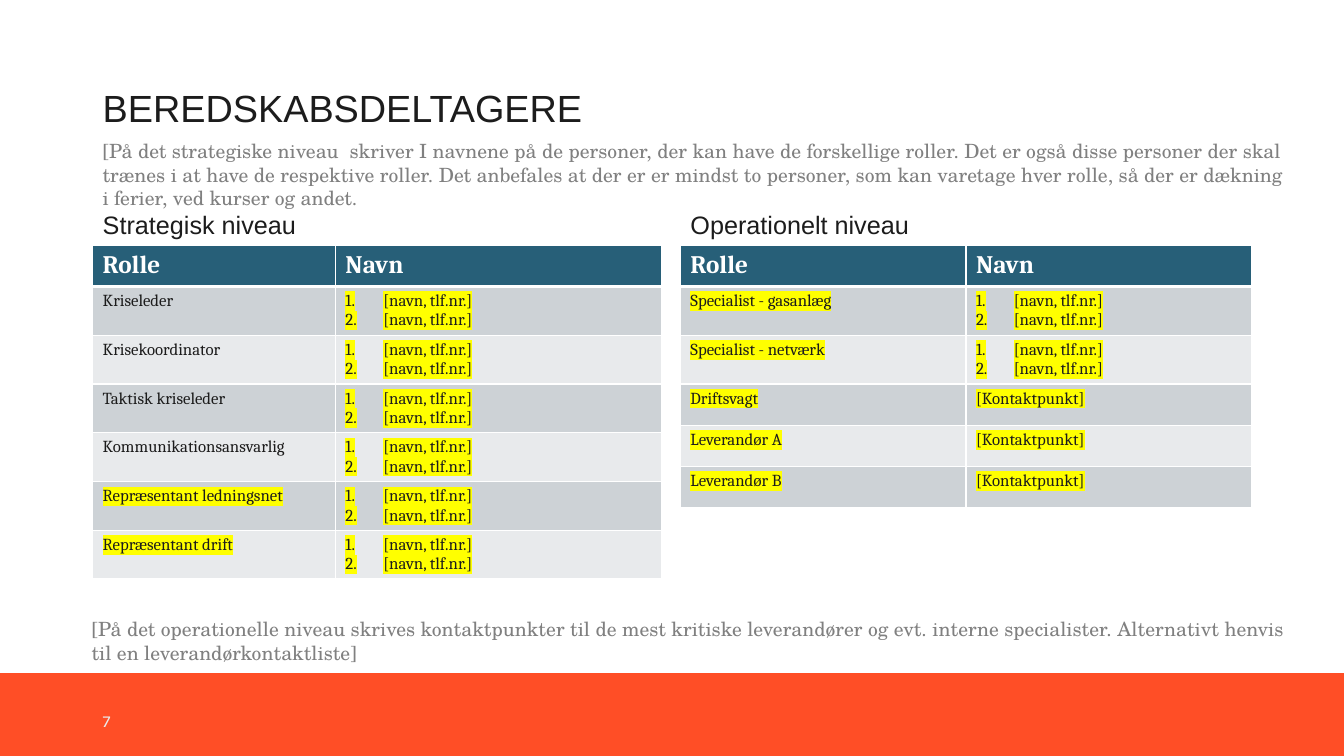
from lxml.etree import SubElement
from pptx import Presentation
from pptx.dml.color import RGBColor
from pptx.enum.shapes import MSO_SHAPE
from pptx.enum.text import MSO_ANCHOR, MSO_AUTO_SIZE, PP_ALIGN
from pptx.oxml.ns import qn
from pptx.util import Pt

ORANGE = RGBColor(0xFF, 0x4E, 0x26)
PETROL = RGBColor(0x27, 0x5F, 0x78)
ROW_DARK = RGBColor(0xCD, 0xD2, 0xD6)
ROW_LIGHT = RGBColor(0xE8, 0xEA, 0xEC)
INK = RGBColor(0x1C, 0x1C, 0x1C)
GREY = RGBColor(0x80, 0x80, 0x80)
PALE = RGBColor(0xEA, 0xEA, 0xEA)
WHITE = RGBColor(0xFF, 0xFF, 0xFF)
YELLOW = RGBColor(0xFF, 0xFF, 0x00)

SLIDE_WIDTH, SLIDE_HEIGHT = 960, 540
LEFT_EDGE = 66.2
NOTE_RIGHT = 926
ROW_HEIGHT = 29.4

NAMES = ["[navn, tlf.nr.]"] * 2
CONTACT = ["[Kontaktpunkt]"]

# Each row: role, whether the role is highlighted, entries in the name column
STRATEGIC = [
    ("Kriseleder", False, NAMES),
    ("Krisekoordinator", False, NAMES),
    ("Taktisk kriseleder", False, NAMES),
    ("Kommunikationsansvarlig", False, NAMES),
    ("Repræsentant ledningsnet", True, NAMES),
    ("Repræsentant drift", True, NAMES),
]
OPERATIONAL = [
    ("Specialist - gasanlæg", True, NAMES),
    ("Specialist - netværk", True, NAMES),
    ("Driftsvagt", True, CONTACT),
    ("Leverandør A", True, CONTACT),
    ("Leverandør B", True, CONTACT),
]
INTRO = ("[På det strategiske niveau  skriver I navnene på de personer, der kan have "
         "de forskellige roller. Det er også disse personer der skal trænes i at have "
         "de respektive roller. Det anbefales at der er er mindst to personer, som kan "
         "varetage hver rolle, så der er dækning i ferier, ved kurser og andet.")
CLOSING = ("[På det operationelle niveau skrives kontaktpunkter til de mest kritiske "
           "leverandører og evt. interne specialister. Alternativt henvis til en "
           "leverandørkontaktliste]")


def add_run(paragraph, text, font, size, color, bold=False, highlight=False):
    run = paragraph.add_run()
    run.text = text
    run.font.size = Pt(size)
    run.font.bold = bold
    run.font.color.rgb = color
    run.font.name = font
    if highlight:
        properties = run.font._element
        mark = properties.makeelement(qn("a:highlight"), {})
        SubElement(mark, qn("a:srgbClr"), val=str(YELLOW))
        properties.find(qn("a:solidFill")).addnext(mark)


def place(shape, left, top, width, height):
    shape.left, shape.top = Pt(left), Pt(top)
    shape.width, shape.height = Pt(width), Pt(height)


def fill_heading(placeholder, box, text, size):
    place(placeholder, *box)
    frame = placeholder.text_frame
    frame.auto_size = MSO_AUTO_SIZE.NONE
    frame.word_wrap = True
    frame.vertical_anchor = MSO_ANCHOR.BOTTOM
    paragraph = frame.paragraphs[0]
    paragraph.alignment = PP_ALIGN.LEFT
    paragraph.line_spacing = 0.9
    paragraph.space_before = Pt(0)
    add_run(paragraph, text, "Arial", size, INK)


def add_text(slide, box, text, font, size, color, anchor):
    frame = slide.shapes.add_textbox(*map(Pt, box)).text_frame
    frame.auto_size = MSO_AUTO_SIZE.NONE
    frame.word_wrap = True
    frame.vertical_anchor = anchor
    add_run(frame.paragraphs[0], text, font, size, color)


def style_cell(cell, color, top_line=1, bottom_line=1):
    cell.fill.solid()
    cell.fill.fore_color.rgb = color
    properties = cell._tc.get_or_add_tcPr()
    sides = {"a:lnL": 1, "a:lnR": 1, "a:lnT": top_line, "a:lnB": bottom_line}
    for position, (side, weight) in enumerate(sides.items()):
        line = properties.makeelement(qn(side), {"w": str(Pt(weight))})
        SubElement(SubElement(line, qn("a:solidFill")), qn("a:srgbClr"), val=str(WHITE))
        properties.insert(position, line)


def number_paragraph(paragraph):
    properties = paragraph._p.get_or_add_pPr()
    indent = Pt(27)
    properties.set("marL", str(indent))
    properties.set("indent", str(-indent))
    SubElement(properties, qn("a:buFont"), typeface="+mj-lt")
    SubElement(properties, qn("a:buAutoNum"), type="arabicPeriod")


def add_role_table(slide, left, top, column_widths, members):
    row_count = len(members) + 1
    table = slide.shapes.add_table(row_count, 2, Pt(left), Pt(top), Pt(sum(column_widths)),
                                   Pt(ROW_HEIGHT * row_count)).table
    table.horz_banding = False
    for column, width in zip(table.columns, column_widths):
        column.width = Pt(width)
    for row in table.rows:
        row.height = Pt(ROW_HEIGHT)

    # Header row
    for index, heading in enumerate(("Rolle", "Navn")):
        cell = table.cell(0, index)
        style_cell(cell, PETROL, bottom_line=3)
        add_run(cell.text_frame.paragraphs[0], heading, "Cambria", 18, WHITE, bold=True)

    # One row per role
    for index, (role, marked, entries) in enumerate(members, start=1):
        role_cell, name_cell = table.cell(index, 0), table.cell(index, 1)
        for cell in (role_cell, name_cell):
            style_cell(cell, ROW_DARK if index % 2 else ROW_LIGHT,
                       top_line=3 if index == 1 else 1)
        add_run(role_cell.text_frame.paragraphs[0], role, "Cambria", 12, INK, highlight=marked)
        names = name_cell.text_frame
        for entry_index, entry in enumerate(entries):
            paragraph = names.add_paragraph() if entry_index else names.paragraphs[0]
            if len(entries) > 1:
                number_paragraph(paragraph)
            add_run(paragraph, entry, "Cambria", 12, INK, highlight=True)


def add_level(slide, placeholder, left, top, heading, column_widths, members):
    heading_height = 64.8
    fill_heading(placeholder, (left, top, sum(column_widths), heading_height), heading, 18)
    add_role_table(slide, left, top + heading_height, column_widths, members)


def add_footer(slide, top):
    band = slide.shapes.add_shape(MSO_SHAPE.RECTANGLE, 0, Pt(top), Pt(SLIDE_WIDTH),
                                  Pt(SLIDE_HEIGHT - top))
    band.shadow.inherit = False
    band.fill.solid()
    band.fill.fore_color.rgb = ORANGE
    band.line.fill.background()
    add_text(slide, (LEFT_EDGE, top + 19.6, 216, 28.8), "7", "Karla", 12, PALE,
             MSO_ANCHOR.MIDDLE)


def add_note(slide, left, top, height, text):
    add_text(slide, (left, top, NOTE_RIGHT - left, height), text, "TeX Gyre Schola", 14,
             GREY, MSO_ANCHOR.BOTTOM)


def build_participants_slide(presentation):
    slide = presentation.slides.add_slide(presentation.slide_layouts.get_by_name("Comparison"))
    slide.background.fill.solid()
    slide.background.fill.fore_color.rgb = WHITE
    title, strategic, strategic_content, operational, operational_content = slide.placeholders
    for unused in (strategic_content, operational_content):
        unused._element.getparent().remove(unused._element)

    add_footer(slide, 480.8)
    fill_heading(title, (LEFT_EDGE, 10.8, 828, 86.4), "BEREDSKABSDELTAGERE", 27)

    # The two levels side by side
    add_level(slide, strategic, LEFT_EDGE, 110.4, "Strategisk niveau",
              (173.4, 232.8), STRATEGIC)
    add_level(slide, operational, 486, 110.4, "Operationelt niveau",
              (204, 204), OPERATIONAL)

    # Guidance above and below the tables
    add_note(slide, LEFT_EDGE, 88.6, 64.8, INTRO)
    add_note(slide, 58.3, 427.7, 50.4, CLOSING)


def main():
    presentation = Presentation()
    presentation.slide_width, presentation.slide_height = Pt(SLIDE_WIDTH), Pt(SLIDE_HEIGHT)
    build_participants_slide(presentation)
    presentation.save("out.pptx")


if __name__ == "__main__":
    main()
